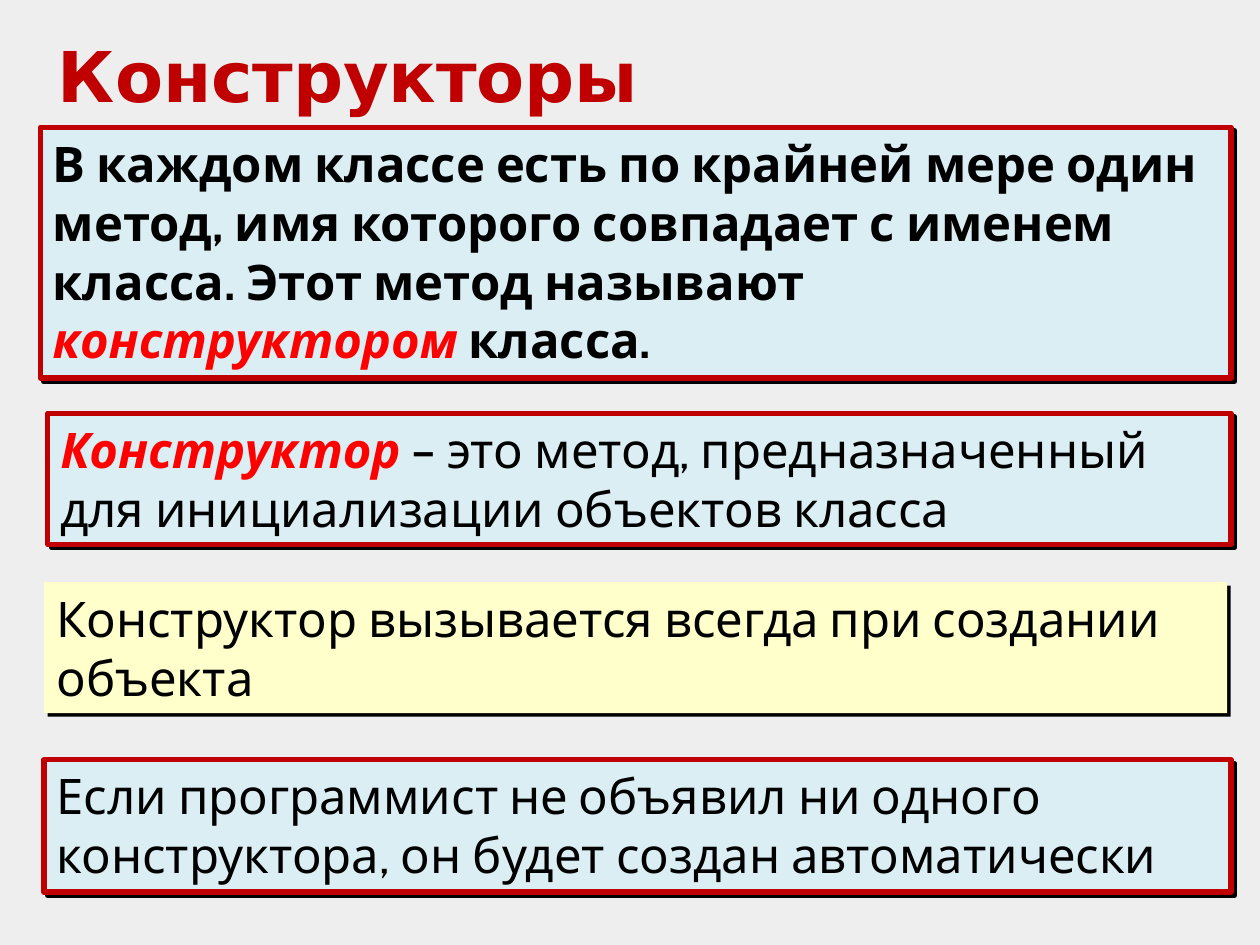
from dataclasses import dataclass

from lxml.etree import SubElement
from pptx import Presentation
from pptx.dml.color import RGBColor as RGB
from pptx.enum.shapes import MSO_SHAPE as Shape
from pptx.enum.text import MSO_ANCHOR as Anchor, PP_ALIGN as Align
from pptx.oxml.ns import qn
from pptx.util import Inches, Pt


@dataclass(frozen=True)
class Theme:
    back: str = "EEEEEE"
    red: str = "C00000"
    term: str = "FF0000"
    ink: str = "000000"
    blue: str = "DBEEF4"
    cream: str = "FFFFCC"
    head_font: str = "DejaVu Sans"
    body_font: str = "Cabin"
    head: int = 40
    body: int = 28
    edge: int = 3


THEME = Theme()


def set_box(shape, box):
    shape.left, shape.top, shape.width, shape.height = map(Inches, box)


def set_frame(shape, anchor):
    frame = shape.text_frame
    frame.word_wrap = True
    frame.vertical_anchor = anchor
    frame.margin_left = frame.margin_right = Inches(0.1)
    frame.margin_top = frame.margin_bottom = Inches(0.05)
    para = frame.paragraphs[0]
    para.alignment = Align.LEFT
    return para


def add_run(para, text, name, size, color, bold=False, italic=False):
    run = para.add_run()
    run.text = text
    font = run.font
    font.name, font.size = name, Pt(size)
    font.bold, font.italic = bold, italic
    font.color.rgb = RGB.from_string(color)


def add_shadow(shape):
    """Give the shape a hard shadow to its lower right."""
    shape.shadow.inherit = False
    effects = shape._element.spPr.find(qn("a:effectLst"))
    outer = SubElement(effects, qn("a:outerShdw"), blurRad="0",
                       dist=str(Pt(2.8)), dir="2700000",
                       algn="ctr", rotWithShape="0")
    SubElement(outer, qn("a:srgbClr"), val=THEME.ink)


def add_title(slide, box, text):
    title = slide.shapes.title
    set_box(title, box)
    para = set_frame(title, Anchor.MIDDLE)
    add_run(para, text, THEME.head_font, THEME.head, THEME.red, bold=True)


def add_note(slide, box, fill, runs, framed=True):
    """Place a text panel; runs are (text, color, bold, italic)."""
    note = slide.shapes.add_shape(Shape.RECTANGLE, *map(Inches, box))
    note.fill.solid()
    note.fill.fore_color.rgb = RGB.from_string(fill)
    if framed:
        note.line.color.rgb = RGB.from_string(THEME.red)
        note.line.width = Pt(THEME.edge)
    else:
        note.line.fill.background()
    add_shadow(note)
    para = set_frame(note, Anchor.TOP)
    for text, *style in runs:
        add_run(para, text, THEME.body_font, THEME.body, *style)


def main():
    deck = Presentation()
    deck.slide_width, deck.slide_height = Inches(10), Inches(7.5)
    slide = deck.slides.add_slide(deck.slide_layouts[5])
    slide.background.fill.solid()
    slide.background.fill.fore_color.rgb = RGB.from_string(THEME.back)

    add_title(slide, (0.36, 0.21, 9.28, 0.77), "Конструкторы")
    add_note(slide, (0.32, 1.01, 9.45, 1.99), THEME.blue, [
        ("В каждом классе есть по крайней мере один метод, имя которого "
         "совпадает с именем класса. Этот метод называют ", THEME.ink, True),
        ("конструктором ", THEME.term, True, True),
        ("класса.", THEME.ink, True),
    ])
    add_note(slide, (0.38, 3.28, 9.39, 1.04), THEME.blue, [
        ("Конструктор", THEME.term, True, True),
        (" – это метод, предназначенный для инициализации объектов класса",
         THEME.ink),
    ])
    add_note(slide, (0.35, 4.62, 9.39, 1.04), THEME.cream, [
        ("Конструктор вызывается всегда при создании объекта", THEME.ink),
    ], framed=False)
    add_note(slide, (0.35, 6.03, 9.42, 1.05), THEME.blue, [
        ("Если программист не объявил ни одного конструктора, "
         "он будет создан автоматически", THEME.ink),
    ])
    deck.save("out.pptx")


if __name__ == "__main__":
    main()
